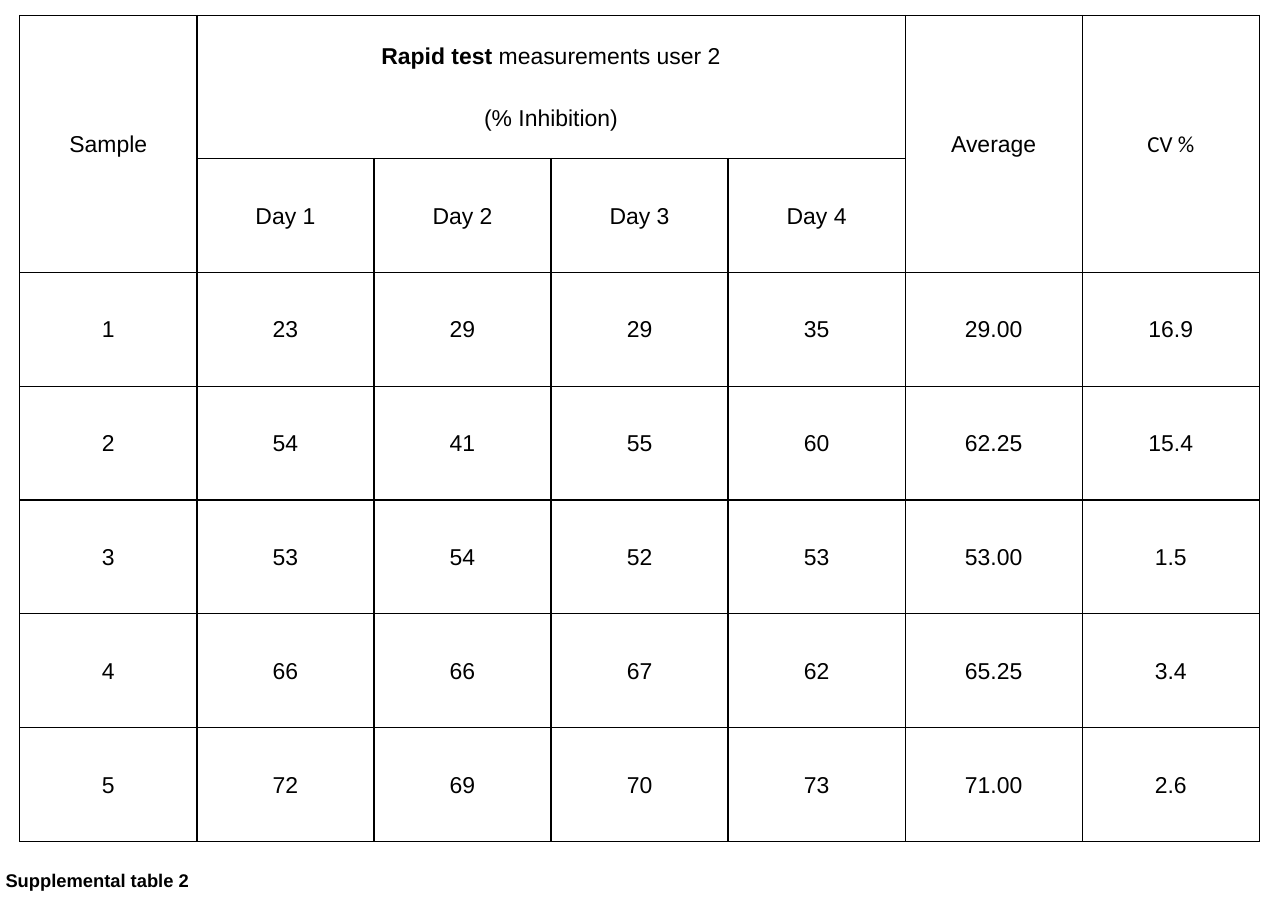
from lxml import etree
from pptx import Presentation
from pptx.dml.color import RGBColor
from pptx.enum.text import MSO_ANCHOR, PP_ALIGN
from pptx.oxml.ns import qn
from pptx.util import Pt

PX = 9144  # 100 px to the inch
LEFT, CENTER = PP_ALIGN.LEFT, PP_ALIGN.CENTER
TOP, MIDDLE = MSO_ANCHOR.TOP, MSO_ANCHOR.MIDDLE
BLACK = "000000"
TITLE_ONLY = 5

DAYS = ["Day 1", "Day 2", "Day 3", "Day 4"]
HEAD = [("Rapid test ", True), ("measurements user 2", False)]
UNIT = [("(% Inhibition)", False)]
ROWS = [
    ["1", "23", "29", "29", "35", "29.00", "16.9"],
    ["2", "54", "41", "55", "60", "62.25", "15.4"],
    ["3", "53", "54", "52", "53", "53.00", "1.5"],
    ["4", "66", "66", "67", "62", "65.25", "3.4"],
    ["5", "72", "69", "70", "73", "71.00", "2.6"],
]


def paint(target, color):
    target.fill.solid()
    target.fill.fore_color.rgb = RGBColor.from_string(color)


def write(frame, lines, size=15, font="Arial", align=CENTER, gap=0, leading=None):
    """Each line is a list of (text, bold) runs."""
    for i, line in enumerate(lines):
        para = frame.add_paragraph() if i else frame.paragraphs[0]
        para.alignment = align
        para.space_before = para.space_after = Pt(gap)
        if leading:
            para.line_spacing = Pt(leading)
        for text, bold in line:
            run = para.add_run()
            run.text = text
            run.font.size, run.font.name, run.font.bold = Pt(size), font, bold
            paint(run.font, BLACK)


def frame_cell(cell):
    props = cell._tc.get_or_add_tcPr()
    for side in ("lnL", "lnR", "lnT", "lnB"):
        line = etree.SubElement(props, qn("a:" + side), w=str(Pt(1)))
        fill = etree.SubElement(line, qn("a:solidFill"))
        etree.SubElement(fill, qn("a:srgbClr"), val=BLACK)
    cell.fill.background()
    cell.vertical_anchor = MIDDLE
    cell.margin_left = cell.margin_right = 5 * PX
    cell.margin_top, cell.margin_bottom = PX, 0


def add_grid(slide, x, y, w, h, top):
    count, width = len(ROWS) + 2, len(ROWS[0])
    shape = slide.shapes.add_table(count, width, x * PX, y * PX, w * PX, h * PX)
    grid = shape.table
    grid.first_row = grid.horz_banding = False
    for col in grid.columns:
        col.width = w * PX // width
    for i, row in enumerate(grid.rows):
        row.height = (h - top) * PX // (count - 1) if i else top * PX
    for cell in grid.iter_cells():
        frame_cell(cell)

    # Headings
    for col, text, font in ((0, "Sample", "Arial"), (5, "Average", "Arial"),
                            (6, "CV %", "Calibri")):
        grid.cell(0, col).merge(grid.cell(1, col))
        write(grid.cell(0, col).text_frame, [[(text, False)]], font=font, gap=12)
    grid.cell(0, 1).merge(grid.cell(0, 4))
    write(grid.cell(0, 1).text_frame, [HEAD, UNIT], gap=12)
    for col, day in enumerate(DAYS, 1):
        write(grid.cell(1, col).text_frame, [[(day, False)]], gap=12)

    # Values
    for r, row in enumerate(ROWS, 2):
        for c, text in enumerate(row):
            gap = 0 if c == width - 1 else 12
            write(grid.cell(r, c).text_frame, [[(text, False)]], gap=gap)


def add_title(slide, x, y, w, h):
    title = slide.shapes.title
    title.left, title.top, title.width, title.height = (n * PX for n in (x, y, w, h))
    frame = title.text_frame
    frame.margin_left = frame.margin_right = 0
    frame.margin_top = frame.margin_bottom = 0
    frame.vertical_anchor = TOP
    frame.word_wrap = True
    write(frame, [[("Supplemental table 2", True)]], size=12, align=LEFT, leading=14.1)


def main():
    deck = Presentation()
    deck.slide_width, deck.slide_height = 1169 * PX, 827 * PX
    slide = deck.slides.add_slide(deck.slide_layouts[TITLE_ONLY])
    add_title(slide, 5, 789, 178, 38)
    add_grid(slide, 18, 14, 1125, 750, top=130)
    deck.save("out.pptx")


if __name__ == "__main__":
    main()
